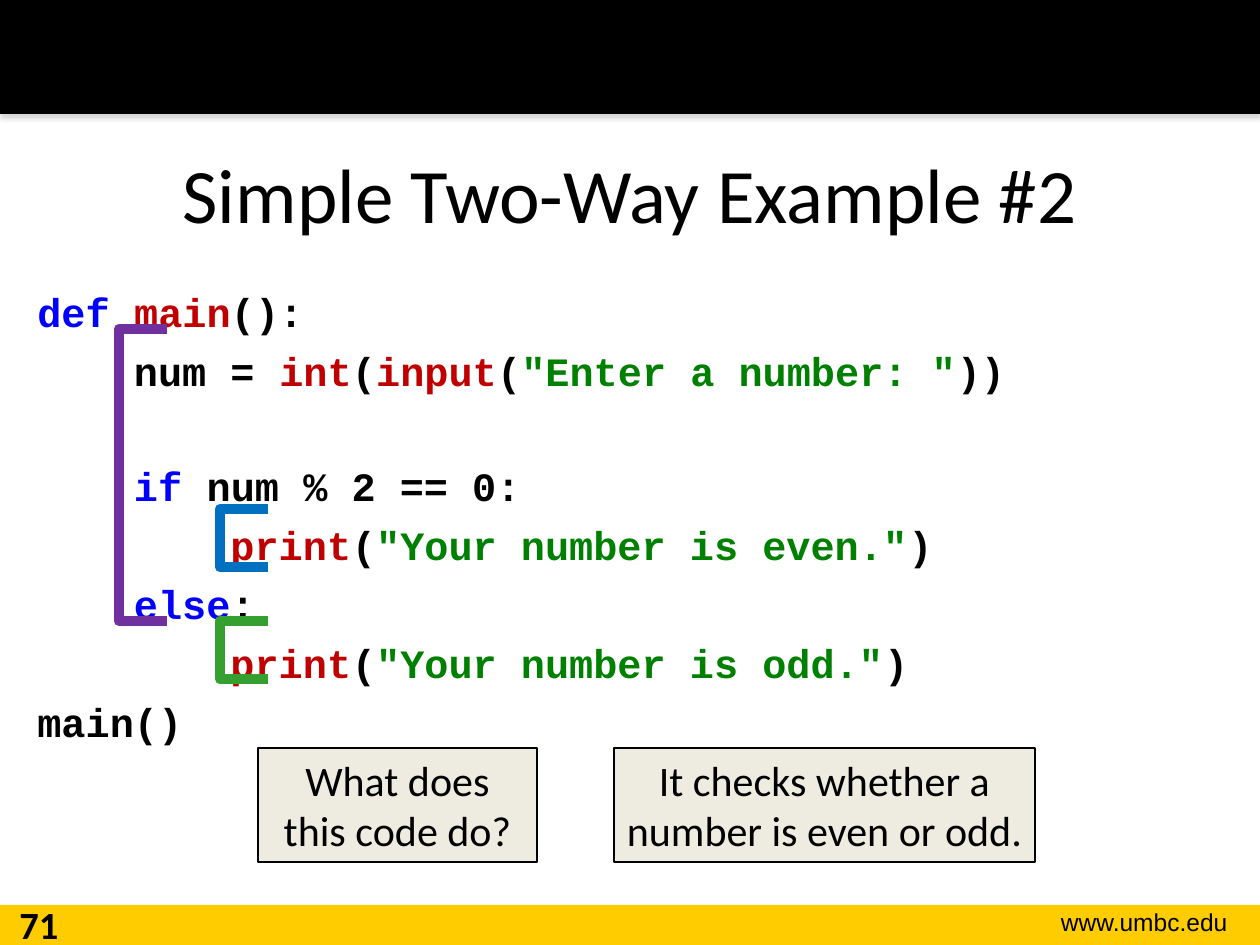
import pptx
import pptx.util
import pptx.dml.color
import pptx.enum.shapes
import pptx.enum.text
import pptx.oxml

RGB = pptx.dml.color.RGBColor
SHAPE = pptx.enum.shapes.MSO_SHAPE
ALIGN = pptx.enum.text.PP_ALIGN
ANCHOR = pptx.enum.text.MSO_ANCHOR

BLACK = RGB(0, 0, 0)
GOLD = RGB(0xFF, 0xCC, 0x00)
CREAM = RGB(0xEE, 0xEC, 0xE1)
KEYWORD = RGB(0x00, 0x00, 0xFF)
FUNCTION = RGB(0xC0, 0x00, 0x00)
STRING = RGB(0x00, 0x80, 0x00)
PURPLE = RGB(0x70, 0x30, 0xA0)
BLUE = RGB(0x00, 0x70, 0xC0)
GREEN = RGB(0x35, 0xA0, 0x30)

EMU_PER_PX = 914400 / 126
SLIDE_W, SLIDE_H = 1260, 945

TITLE = dict(name="Calibri", size=pptx.util.Pt(44))
CODE = dict(name="Courier New", size=pptx.util.Pt(23), bold=True)
CALLOUT = dict(name="Calibri", size=pptx.util.Pt(24))
PAGE = dict(name="Calibri", size=pptx.util.Pt(22), bold=True)
SITE = dict(name="Arial", size=pptx.util.Pt(14))

LINE_GAP = 6.1      # points between code lines
LINE_PITCH = 32.2   # points from one code line to the next

# Each line is (skipped lines above, [(text, colour), ...])
CODE_LINES = [
    (0, [("def ", KEYWORD), ("main", FUNCTION), ("():", BLACK)]),
    (0, [("    num = ", BLACK), ("int", FUNCTION), ("(", BLACK),
         ("input", FUNCTION), ("(", BLACK),
         ('"Enter a number: "', STRING), ("))", BLACK)]),
    (1, [("    if ", KEYWORD), ("num % 2 == 0:", BLACK)]),
    (0, [("        print", FUNCTION), ("(", BLACK),
         ('"Your number is even."', STRING), (")", BLACK)]),
    (0, [("    else", KEYWORD), (":", BLACK)]),
    (0, [("        print", FUNCTION), ("(", BLACK),
         ('"Your number is odd."', STRING), (")", BLACK)]),
    (0, [("main()", BLACK)]),
]

SHADOW = (
    '<a:effectLst xmlns:a="http://schemas.openxmlformats.org/drawingml/2006/main">'
    '<a:outerShdw blurRad="39370" dist="22860" dir="5400000" rotWithShape="0">'
    '<a:srgbClr val="808080"><a:alpha val="35000"/></a:srgbClr>'
    '</a:outerShdw></a:effectLst>'
)


def px(length):
    return pptx.util.Emu(round(length * EMU_PER_PX))


def add_run(paragraph, text, style, color=BLACK):
    run = paragraph.add_run()
    run.text = text
    for attribute, value in style.items():
        setattr(run.font, attribute, value)
    run.font.color.rgb = color


def add_words(slide, box, text, style, align, anchor=ANCHOR.TOP):
    words = slide.shapes.add_textbox(*map(px, box)).text_frame
    words.word_wrap = True
    words.vertical_anchor = anchor
    words.paragraphs[0].alignment = align
    add_run(words.paragraphs[0], text, style)


def add_outline(slide, kind, box, fill=None, line=None, width=0.75):
    outline = slide.shapes.add_shape(kind, *map(px, box))
    outline.shadow.inherit = False
    if fill is None:
        outline.fill.background()
    else:
        outline.fill.solid()
        outline.fill.fore_color.rgb = fill
    if line is None:
        outline.line.fill.background()
    else:
        outline.line.color.rgb = line
        outline.line.width = pptx.util.Pt(width)
    return outline


def header(slide, box):
    band = add_outline(slide, SHAPE.RECTANGLE, box, fill=BLACK)
    properties = band.element.spPr
    properties.remove(properties[-1])  # the empty effect list
    properties.append(pptx.oxml.parse_xml(SHADOW))


def footer(slide, box):
    left, top, width, height = box
    add_outline(slide, SHAPE.RECTANGLE, box, fill=GOLD)
    add_words(slide, (left + width - 271, top - 4, 251, 43),
              "www.umbc.edu", SITE, ALIGN.RIGHT)
    add_words(slide, (left, top - 10, 78, 50), "71", PAGE, ALIGN.CENTER)


def code_listing(slide, box):
    left, top, _, _ = box
    listing = slide.shapes.add_textbox(*map(px, box)).text_frame
    listing.word_wrap = True
    listing.margin_top = px(16)
    for index, (skipped, tokens) in enumerate(CODE_LINES):
        if index:
            line = listing.add_paragraph()
            line.space_before = pptx.util.Pt(round(LINE_GAP + skipped * LINE_PITCH, 1))
        else:
            line = listing.paragraphs[0]
        for text, color in tokens:
            add_run(line, text, CODE, color)

    # Brackets around the function body and both branches
    for x, y, height, color in [(94, 58, 292, PURPLE), (195, 238, 58, BLUE),
                                (195, 350, 58, GREEN)]:
        bracket = add_outline(slide, SHAPE.LEFT_BRACKET,
                              (left + x, top + y, 48, height), line=color, width=6)
        bracket.adjustments[0] = 0


def callout(slide, box, text):
    note = add_outline(slide, SHAPE.RECTANGLE, box, fill=CREAM, line=BLACK).text_frame
    note.word_wrap = True
    note.vertical_anchor = ANCHOR.TOP
    note.paragraphs[0].alignment = ALIGN.CENTER
    add_run(note.paragraphs[0], text, CALLOUT)


def main():
    deck = pptx.Presentation()
    deck.slide_width, deck.slide_height = px(SLIDE_W), px(SLIDE_H)
    slide = deck.slides.add_slide(deck.slide_layouts[6])

    footer(slide, (0, 905, SLIDE_W, 40))
    header(slide, (0, 0, SLIDE_W, 114))
    add_words(slide, (63, 114, 1134, 158), "Simple Two-Way Example #2",
              TITLE, ALIGN.CENTER, ANCHOR.MIDDLE)
    code_listing(slide, (25, 271, 1221, 573))
    callout(slide, (258, 748, 279, 114), "What does this code do?")
    callout(slide, (614, 748, 421, 114), "It checks whether a number is even or odd.")

    deck.save("out.pptx")


if __name__ == "__main__":
    main()
